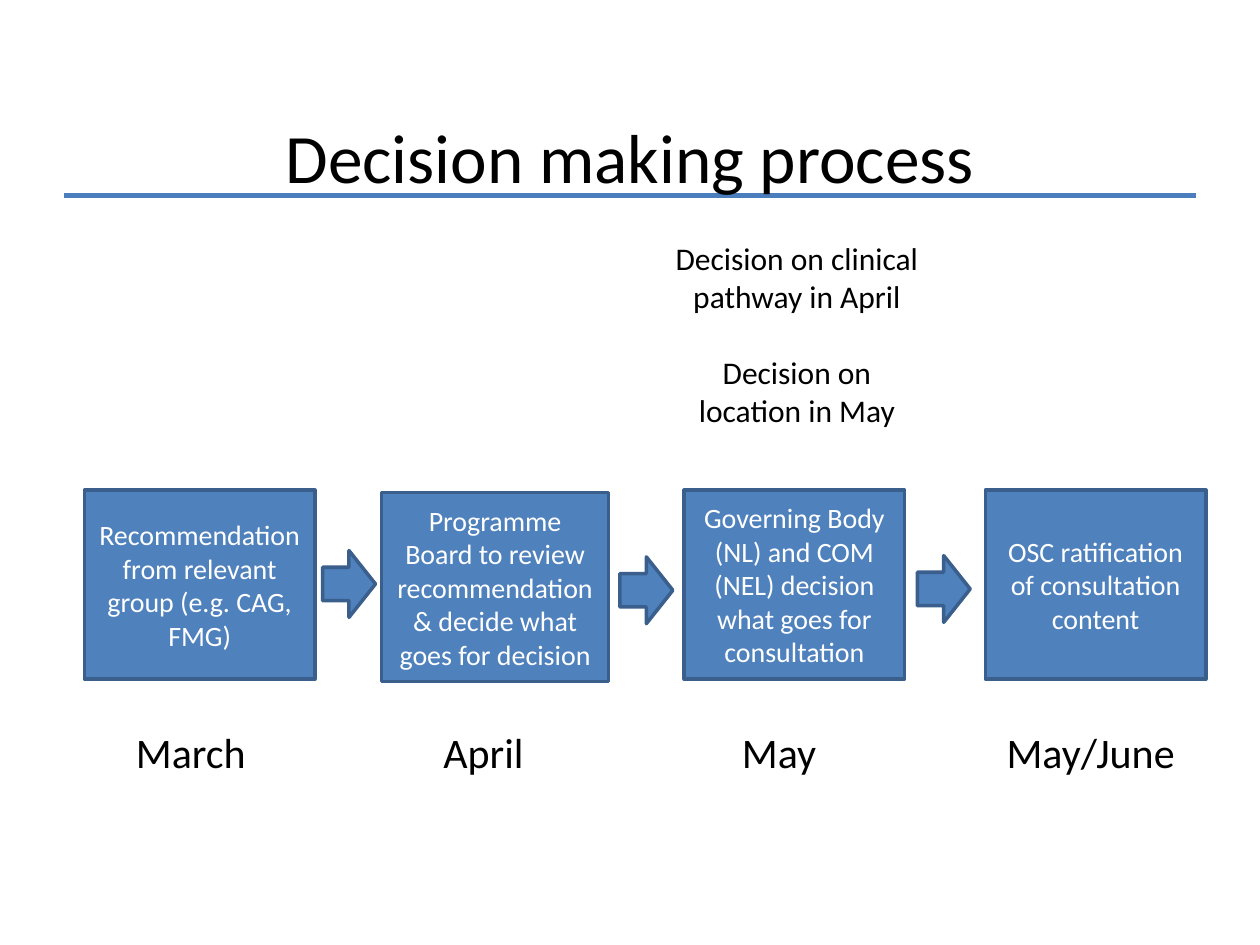
from dataclasses import dataclass

from lxml.etree import SubElement
from pptx import Presentation
from pptx.dml.color import RGBColor
from pptx.enum.shapes import MSO_CONNECTOR as Connector, MSO_SHAPE as Preset
from pptx.enum.text import MSO_ANCHOR as Anchor, MSO_AUTO_SIZE as AutoSize, PP_ALIGN as Align
from pptx.oxml.ns import qn
from pptx.shapes.autoshape import Shape
from pptx.slide import Slide
from pptx.text.text import TextFrame
from pptx.util import Inches, Pt

COLORS = {"text": "000000", "box": "4F81BD", "outline": "3A5F8C", "rule": "4B7EBC", "box_text": "FFFFFF"}
FONT = "Calibri"


@dataclass
class Step:
    text: str
    left: float
    top: float
    width: float
    month: str
    month_left: float
    month_width: float


STEPS = [
    Step("Recommendation from relevant group (e.g. CAG, FMG)", 0.67, 3.89, 1.83, "March", 0.98, 1.08),
    Step("Programme Board to review recommendation & decide what goes for decision",
         3.03, 3.91, 1.8, "April", 3.42, 0.85),
    Step("Governing Body (NL) and COM (NEL) decision what goes for consultation",
         5.43, 3.89, 1.75, "May", 5.79, 0.8),
    Step("OSC ratification of consultation content", 7.82, 3.89, 1.75, "May/June", 7.89, 1.55),
]
STEP_HEIGHT = 1.5
ARROW_LEFT, ARROW_PITCH = 2.56, 2.36
ARROW_TOPS = [4.37, 4.42, 4.41]


def color(name: str) -> RGBColor:
    return RGBColor.from_string(COLORS[name])


def write(frame: TextFrame, texts: list[str], size: float, color_name: str, align: Align, gap: float = 0) -> None:
    for index, text in enumerate(texts):
        paragraph = frame.add_paragraph() if index else frame.paragraphs[0]
        paragraph.alignment = align
        if index:
            paragraph.space_before = Pt(gap)
        run = paragraph.add_run()
        run.text = text
        run.font.name = FONT
        run.font.size = Pt(size)
        run.font.color.rgb = color(color_name)


def add_text(slide: Slide, left: float, top: float, width: float, height: float, wrap: bool = True) -> TextFrame:
    box = slide.shapes.add_textbox(Inches(left), Inches(top), Inches(width), Inches(height))
    box.text_frame.word_wrap = wrap
    box.text_frame.auto_size = AutoSize.SHAPE_TO_FIT_TEXT
    return box.text_frame


def add_block(slide: Slide, preset: Preset, left: float, top: float, width: float, height: float) -> Shape:
    shape = slide.shapes.add_shape(preset, Inches(left), Inches(top), Inches(width), Inches(height))
    shape.shadow.inherit = False
    shape.fill.solid()
    shape.fill.fore_color.rgb = color("box")
    shape.line.color.rgb = color("outline")
    shape.line.width = Pt(2)
    return shape


def add_rule(slide: Slide) -> None:
    rule = slide.shapes.add_connector(Connector.STRAIGHT, Inches(0.51), Inches(1.55), Inches(9.49), Inches(1.55))
    rule.line.color.rgb = color("rule")
    rule.line.width = Pt(3)
    SubElement(rule.element.spPr, qn("a:effectLst"))


def add_title(slide: Slide) -> None:
    frame = add_text(slide, 0.5, 0.92, 9, 0.64)
    frame.auto_size = AutoSize.NONE
    frame.vertical_anchor = Anchor.MIDDLE
    write(frame, ["Decision making process"], 39.6, "text", Align.CENTER)


def add_step(slide: Slide, step: Step) -> None:
    box = add_block(slide, Preset.RECTANGLE, step.left, step.top, step.width, STEP_HEIGHT)
    box.text_frame.word_wrap = True
    box.text_frame.vertical_anchor = Anchor.MIDDLE
    write(box.text_frame, [step.text], 16, "box_text", Align.CENTER)
    month = add_text(slide, step.month_left, 5.72, step.month_width, 0.5, wrap=False)
    write(month, [step.month], 24, "text", Align.LEFT)


def main() -> None:
    presentation = Presentation()
    presentation.slide_width = Inches(10)
    presentation.slide_height = Inches(7.5)
    slide = presentation.slides.add_slide(presentation.slide_layouts[6])
    add_rule(slide)
    add_title(slide)
    for step in STEPS:
        add_step(slide, step)
    for index, top in enumerate(ARROW_TOPS):
        add_block(slide, Preset.RIGHT_ARROW, ARROW_LEFT + index * ARROW_PITCH, top, 0.42, 0.53)
    decisions = ["Decision on clinical pathway in April", "Decision on location in May"]
    write(add_text(slide, 5.22, 1.85, 2.21, 1.92), decisions, 18, "text", Align.CENTER, gap=22)
    presentation.save("out.pptx")


if __name__ == "__main__":
    main()
